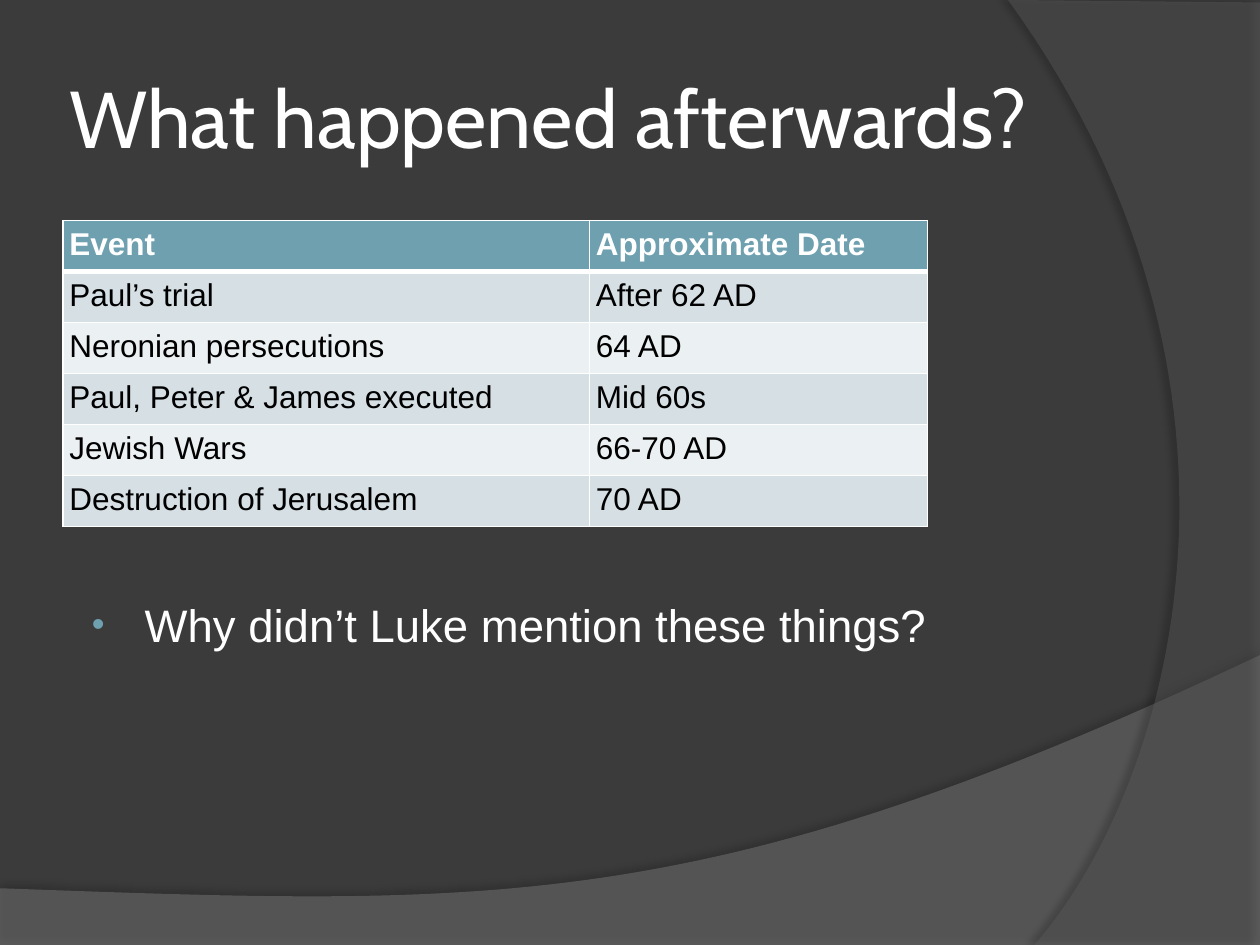
from lxml.etree import SubElement as Sub
from pptx import Presentation
from pptx.dml.color import RGBColor as RGB
from pptx.enum.text import MSO_ANCHOR as Anchor
from pptx.oxml.ns import qn
from pptx.util import Inches, Pt

COLORS = dict(bg="3B3B3B", white="FFFFFF", black="000000", teal="6EA0B0",
              band="D5DFE4", pale="EBF0F2", wave="7F7F7F", arc="5E5E5E")
MARGINS = ("margin_left", "margin_top", "margin_right", "margin_bottom")
TITLE = dict(name="Cabin", size=Pt(46))
BODY = dict(name="Arial", size=Pt(26))
HEAD = dict(name="Arial", size=Pt(18), bold=True)
CELL = dict(HEAD, bold=False)
EVENTS = [
    ("Event", "Approximate Date"),
    ("Paul’s trial", "After 62 AD"),
    ("Neronian persecutions", "64 AD"),
    ("Paul, Peter & James executed", "Mid 60s"),
    ("Jewish Wars", "66-70 AD"),
    ("Destruction of Jerusalem", "70 AD"),
]


def grid(n):
    return Inches(n * 0.25)


def bezier(a, b, c, d, steps=60):
    for i in range(steps + 1):
        t = i / steps
        u = 1 - t
        yield tuple(u**3 * p + 3 * u * u * t * q + 3 * u * t * t * r + t**3 * s
                    for p, q, r, s in zip(a, b, c, d))


def set_attrs(obj, values):
    for key, value in values.items():
        setattr(obj, key, value)


def add_color(parent, color, alpha=None):
    clr = Sub(parent, qn("a:srgbClr"), val=COLORS[color])
    if alpha:
        Sub(clr, qn("a:alpha"), val=str(alpha * 1000))


class Deck:
    def __init__(self):
        self.prs = Presentation()
        self.prs.slide_width, self.prs.slide_height = grid(40), grid(30)

    def slide(self):
        self.s = self.prs.slides.add_slide(self.prs.slide_layouts[6])
        self.fill(self.s.background, "bg")

    def fill(self, obj, color):
        obj.fill.solid()
        obj.fill.fore_color.rgb = RGB.from_string(COLORS[color])

    def add_run(self, p, text, font, color):
        r = p.add_run()
        r.text = text
        set_attrs(r.font, font)
        r.font.color.rgb = RGB.from_string(COLORS[color])

    def swoosh(self, points, color, alpha, shade, dist, angle):
        pts = [(grid(x), grid(y)) for x, y in points]
        fb = self.s.shapes.build_freeform(*pts[0])
        fb.add_line_segments(pts[1:], close=True)
        sp = fb.convert_to_shape()
        self.fill(sp, color)
        spPr = sp._element.spPr
        clr = spPr.find(qn("a:solidFill")).find(qn("a:srgbClr"))
        Sub(clr, qn("a:alpha"), val=str(alpha * 1000))
        sp.line.fill.background()
        sp.shadow.inherit = False
        effects = spPr.find(qn("a:effectLst"))
        shadow = Sub(effects, qn("a:outerShdw"), blurRad=str(Pt(4)), dist=str(Pt(dist)),
                     dir=str(angle * 60000), algn="ctr", rotWithShape="0")
        add_color(shadow, "black", shade)

    def text(self, box, text, font, anchor, margins=None, bullet=False):
        tf = self.s.shapes.add_textbox(*map(grid, box)).text_frame
        set_attrs(tf, dict(word_wrap=True, vertical_anchor=anchor))
        set_attrs(tf, margins or {})
        p = tf.paragraphs[0]
        self.add_run(p, text, font, "white")
        if bullet:
            p.space_before = Pt(5)
            pPr = p._p.get_or_add_pPr()
            pPr.set("marL", str(Inches(0.46)))
            pPr.set("indent", str(Inches(-0.42)))
            add_color(Sub(pPr, qn("a:buClr")), "teal")
            Sub(pPr, qn("a:buSzPct"), val="80000")
            Sub(pPr, qn("a:buFont"), typeface="Arial")
            Sub(pPr, qn("a:buChar"), char="•")

    def borders(self, cell, bottom):
        tcPr = cell._tc.get_or_add_tcPr()
        for i, side in enumerate("LRTB"):
            width = bottom if side == "B" else 1
            ln = Sub(tcPr, qn("a:ln" + side), w=str(Pt(width)))
            add_color(Sub(ln, qn("a:solidFill")), "white")
            tcPr.insert(i, ln)

    def table(self, left, top, widths, row_height, rows, margins):
        table = self.s.shapes.add_table(
            len(rows), len(widths), grid(left), grid(top),
            grid(sum(widths)), grid(row_height * len(rows))).table
        for col, width in zip(table.columns, widths):
            col.width = grid(width)
        for i, row in enumerate(rows):
            table.rows[i].height = grid(row_height)
            head = i == 0
            color = "teal" if head else "band" if i % 2 else "pale"
            for j, text in enumerate(row):
                cell = table.cell(i, j)
                set_attrs(cell, margins)
                self.borders(cell, 3 if head else 1)
                self.fill(cell, color)
                self.add_run(cell.text_frame.paragraphs[0], text,
                             HEAD if head else CELL, "white" if head else "black")


def main():
    deck = Deck()
    deck.slide()
    insets = dict.fromkeys(MARGINS, Inches(0.05))
    wave = bezier((40, 20.8), (22.36, 29.16), (15.64, 28.76), (0, 28.2))
    deck.swoosh([(0, 30), (40, 30), *wave], "wave", 45, 35, 3.5, 270)
    arc = bezier((32.84, 30), (37.4, 24.76), (40.72, 12), (32, 0))
    deck.swoosh([(40, 0.08), (40, 30), *arc], "arc", 40, 45, 4, 180)
    deck.text((2, 1.2, 32.68, 5), "What happened afterwards?", TITLE, Anchor.MIDDLE, insets)
    deck.table(2, 7, (16.72, 10.72), 1.62, EVENTS, insets)
    deck.text((2.36, 18.76, 28.36, 4.24), "Why didn’t Luke mention these things?",
              BODY, Anchor.TOP, bullet=True)
    deck.prs.save("out.pptx")


if __name__ == "__main__":
    main()
